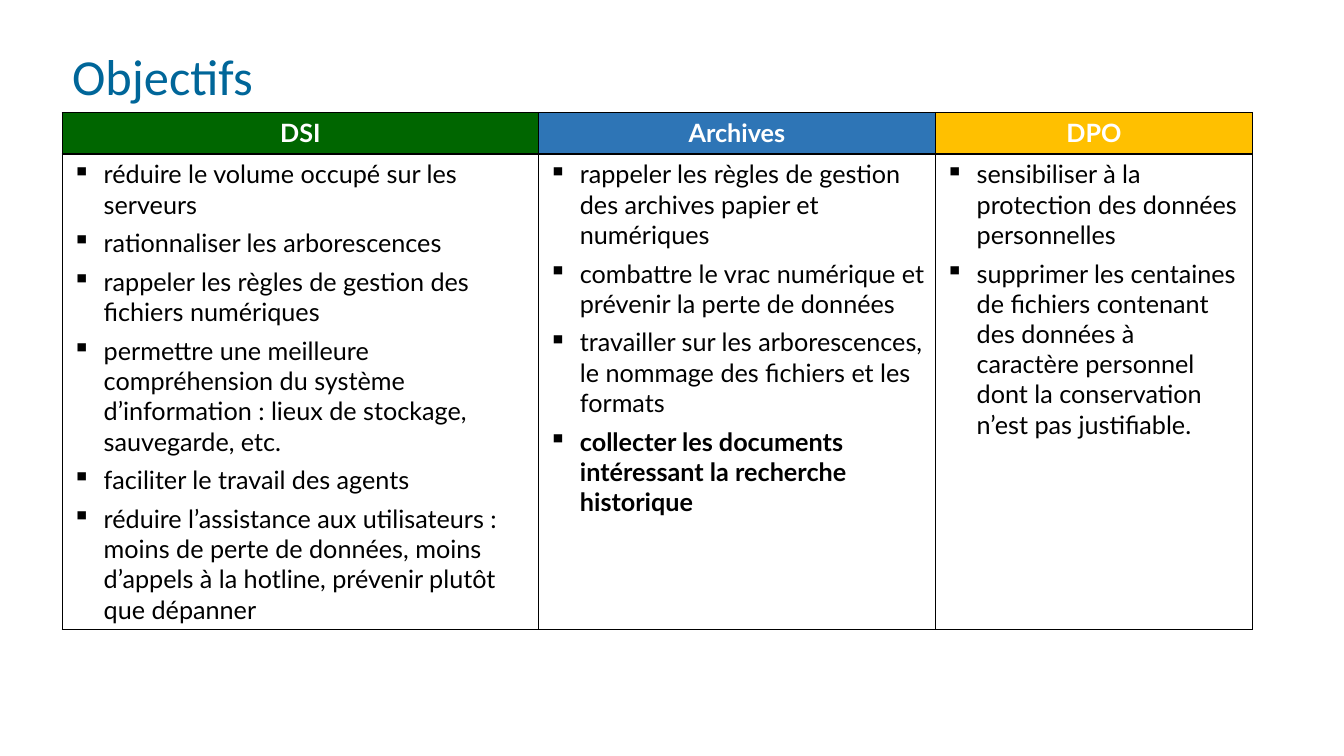
"""Build the slide of objectives for the three partner departments."""
from dataclasses import dataclass

import lxml.etree
import pptx
import pptx.dml.color
import pptx.enum.text
import pptx.oxml.ns
import pptx.slide
import pptx.table
import pptx.text.text
import pptx.util
from pptx.util import Cm

LEFT = 1.57
TABLE_TOP = 2.84
HEADER_HEIGHT = 1.04
BODY_HEIGHT = 11.96
BULLET_INDENT = 0.79


@dataclass(frozen=True)
class Goal:
    text: str
    bold: bool = False


@dataclass(frozen=True)
class Department:
    name: str
    color: str
    width: float
    goals: tuple[Goal, ...]


DEPARTMENTS = (
    Department("DSI", "006600", 12, (
        Goal("réduire le volume occupé sur les serveurs"),
        Goal("rationnaliser les arborescences"),
        Goal("rappeler les règles de gestion des fichiers numériques"),
        Goal("permettre une meilleure compréhension du système d’information : "
             "lieux de stockage, sauvegarde, etc."),
        Goal("faciliter le travail des agents"),
        Goal("réduire l’assistance aux utilisateurs : moins de perte de données, "
             "moins d’appels à la hotline, prévenir plutôt que dépanner"),
    )),
    Department("Archives", "2E75B6", 10, (
        Goal("rappeler les règles de gestion des archives papier et numériques"),
        Goal("combattre le vrac numérique et prévenir la perte de données"),
        Goal("travailler sur les arborescences, le nommage des fichiers et les formats"),
        Goal("collecter les documents intéressant la recherche historique", bold=True),
    )),
    Department("DPO", "FFC000", 8, (
        Goal("sensibiliser à la protection des données personnelles"),
        Goal("supprimer les centaines de fichiers contenant des données à caractère "
             "personnel dont la conservation n’est pas justifiable."),
    )),
)


def rgb(color: str) -> pptx.dml.color.RGBColor:
    return pptx.dml.color.RGBColor.from_string(color)


def add_element(parent: lxml.etree._Element, tag: str,
                **attributes: str) -> lxml.etree._Element:
    return lxml.etree.SubElement(parent, pptx.oxml.ns.qn(tag), attributes)


def add_run(paragraph: pptx.text.text._Paragraph, text: str, font: str,
            size: float, color: str, bold: bool = False) -> None:
    run = paragraph.add_run()
    run.text = text
    run.font.name = font
    run.font.size = pptx.util.Pt(size)
    run.font.bold = bold
    run.font.color.rgb = rgb(color)


def add_bullet(paragraph: pptx.text.text._Paragraph) -> None:
    properties = paragraph._p.get_or_add_pPr()
    properties.set("marL", str(Cm(BULLET_INDENT)))
    properties.set("indent", str(-Cm(BULLET_INDENT)))
    add_element(properties, "a:buChar", char="▪")


def style_cell(cell: pptx.table._Cell, color: str) -> None:
    properties = cell._tc.get_or_add_tcPr()
    for side in ("a:lnL", "a:lnR", "a:lnT", "a:lnB"):
        line = add_element(properties, side, w=str(pptx.util.Pt(1)))
        add_element(add_element(line, "a:solidFill"), "a:srgbClr", val="000000")
    cell.fill.solid()
    cell.fill.fore_color.rgb = rgb(color)


def fill_header(cell: pptx.table._Cell, department: Department) -> None:
    style_cell(cell, department.color)
    paragraph = cell.text_frame.paragraphs[0]
    paragraph.alignment = pptx.enum.text.PP_ALIGN.CENTER
    add_run(paragraph, department.name, "Lato", 18, "FFFFFF", bold=True)


def fill_goals(cell: pptx.table._Cell, goals: tuple[Goal, ...]) -> None:
    style_cell(cell, "FFFFFF")
    frame = cell.text_frame
    for index, goal in enumerate(goals):
        paragraph = frame.add_paragraph() if index else frame.paragraphs[0]
        add_bullet(paragraph)
        paragraph.space_before = pptx.util.Pt(3 if index else 0)
        paragraph.space_after = pptx.util.Pt(3)
        add_run(paragraph, goal.text, "Lato", 18, "000000", goal.bold)


def add_title(slide: pptx.slide.Slide, text: str, width: float) -> None:
    box = slide.shapes.add_textbox(Cm(LEFT), Cm(1.19), Cm(width), Cm(1.65))
    frame = box.text_frame
    frame.word_wrap = True
    frame.auto_size = pptx.enum.text.MSO_AUTO_SIZE.SHAPE_TO_FIT_TEXT
    paragraph = frame.paragraphs[0]
    paragraph.line_spacing = 0.9
    add_run(paragraph, text, "Calibri", 36, "006699")


def add_department_table(slide: pptx.slide.Slide, width: float) -> None:
    table = slide.shapes.add_table(
        2, len(DEPARTMENTS), Cm(LEFT), Cm(TABLE_TOP), Cm(width),
        Cm(HEADER_HEIGHT + BODY_HEIGHT)).table
    table.horz_banding = False
    table.rows[0].height = Cm(HEADER_HEIGHT)
    table.rows[1].height = Cm(BODY_HEIGHT)
    for index, department in enumerate(DEPARTMENTS):
        table.columns[index].width = Cm(department.width)
        fill_header(table.cell(0, index), department)
        fill_goals(table.cell(1, index), department.goals)


def main() -> None:
    presentation = pptx.Presentation()
    presentation.slide_width = Cm(33.87)
    presentation.slide_height = Cm(19.05)
    slide = presentation.slides.add_slide(presentation.slide_layouts[6])
    width = sum(department.width for department in DEPARTMENTS)
    add_title(slide, "Objectifs", width)
    add_department_table(slide, width)
    presentation.save("out.pptx")


if __name__ == "__main__":
    main()
